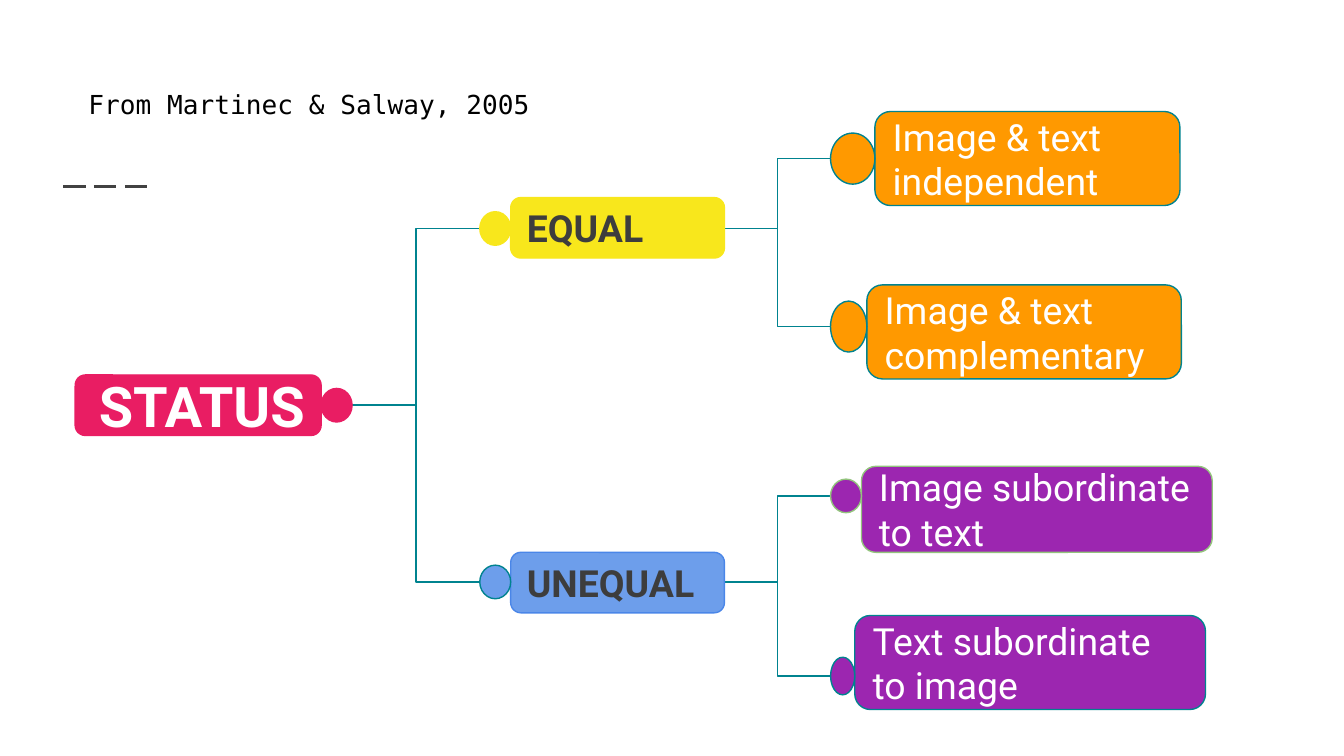
from pptx import Presentation
from pptx.dml.color import RGBColor
from pptx.enum.dml import MSO_LINE as Dash
from pptx.enum.shapes import MSO_CONNECTOR as Conn, MSO_SHAPE as Form
from pptx.enum.text import MSO_ANCHOR as Anchor, PP_ALIGN as Align
from pptx.oxml.ns import qn
from pptx.util import Inches, Pt
from lxml.etree import SubElement

TEAL, GREEN, WHITE, DARK = "00838F", "93C47D", "FFFFFF", "3D3D3D"
PINK, YELLOW, BLUE = "E91D63", "F8E71C", "6D9EEB"
ORANGE, PURPLE = "FF9900", "9C26B0"

ROOT = (0.56, 2.79, 1.83, 0.45)
ROOT_KNOB = (2.39, 2.89, 0.23, 0.25)

# Branch: label, box, box line, knob size, knob middle, knob line, fill
BRANCHES = [
    ("EQUAL", (3.8, 1.47, 1.59, 0.45), YELLOW, (0.23, 0.25), 1.7, YELLOW, YELLOW),
    ("UNEQUAL", (3.8, 4.11, 1.59, 0.45), "4A86E8", (0.23, 0.25), 4.33, TEAL, BLUE),
]
# The leaves of each branch, in the same form
LEAVES = [
    [("Image & text independent", (6.51, 0.83, 2.27, 0.7), TEAL,
      (0.33, 0.38), 1.18, TEAL, ORANGE),
     ("Image & text complementary", (6.45, 2.12, 2.34, 0.7), TEAL,
      (0.27, 0.38), 2.43, TEAL, ORANGE)],
    [("Image subordinate to text", (6.41, 3.47, 2.61, 0.64), GREEN,
      (0.23, 0.25), 3.69, GREEN, PURPLE),
     ("Text subordinate to image", (6.36, 4.58, 2.61, 0.7), TEAL,
      (0.18, 0.28), 5.03, TEAL, PURPLE)],
]


def rgb(code):
    return RGBColor.from_string(code)


def write(shape, text, size, color, font="Roboto", bold=False,
          align=Align.LEFT, anchor=Anchor.MIDDLE):
    frame = shape.text_frame
    frame.word_wrap = True
    frame.vertical_anchor = anchor
    frame.margin_left = frame.margin_right = Inches(0.1)
    frame.margin_top = frame.margin_bottom = Inches(0.1)
    para = frame.paragraphs[0]
    para.alignment = align
    run = para.add_run()
    run.text = text
    run.font.name, run.font.size, run.font.bold = font, Pt(size), bold
    run.font.color.rgb = rgb(color)


def draw_line(slide, kind, start, end, color, width):
    line = slide.shapes.add_connector(kind, *map(Inches, start + end))
    line.line.color.rgb = rgb(color)
    line.line.width = Pt(width)
    SubElement(line._element.spPr, qn("a:effectLst"))
    return line


def add_form(group, form, box, fill, edge):
    shape = group.shapes.add_shape(form, *map(Inches, box))
    shape.shadow.inherit = False
    shape.fill.solid()
    shape.fill.fore_color.rgb = rgb(fill)
    shape.line.color.rgb = rgb(edge)
    shape.line.width = Pt(0.75)
    return shape


def add_node(slide, box, knob, fill, edge, rim, text, size, color, **style):
    """A rounded label with its round knob, as one group."""
    group = slide.shapes.add_group_shape()
    label = add_form(group, Form.ROUNDED_RECTANGLE, box, fill, edge)
    write(label, text, size, color, **style)
    add_form(group, Form.OVAL, knob, fill, rim)


def add_child(slide, node, color, bold):
    """A node whose knob sits against the left side of its box."""
    text, box, edge, (wide, high), mid, rim, fill = node
    knob = (box[0] - wide, mid - high / 2, wide, high)
    add_node(slide, box, knob, fill, edge, rim, text, 20, color, bold=bold)


def link(slide, start, node):
    box, size, mid = node[1], node[3], node[4]
    draw_line(slide, Conn.ELBOW, start, (box[0] - size[0], mid), TEAL, 0.75)


def add_tree(slide):
    # Links lie behind the nodes
    left, top, wide, high = ROOT_KNOB
    for branch, leaves in zip(BRANCHES, LEAVES):
        link(slide, (left + wide, top + high / 2), branch)
        box = branch[1]
        for leaf in leaves:
            link(slide, (box[0] + box[2], branch[4]), leaf)

    # Nodes
    add_node(slide, ROOT, ROOT_KNOB, PINK, PINK, PINK, "STATUS", 30, WHITE,
             bold=True, align=Align.RIGHT)
    for branch, leaves in zip(BRANCHES, LEAVES):
        add_child(slide, branch, DARK, True)
        for leaf in leaves:
            add_child(slide, leaf, WHITE, False)


def add_header(slide, left, top, wide, high):
    # Source of the scheme
    note = slide.shapes.add_textbox(*map(Inches, (left, top, wide, high)))
    write(note, "From Martinec & Salway, 2005", 14, "000000",
          font="DejaVu Sans Mono", anchor=Anchor.TOP)
    # Dashed rule below it
    x, y = left - 0.09, top + 0.83
    rule = draw_line(slide, Conn.STRAIGHT, (x, y), (x + 0.67, y), "424242", 1.5)
    rule.line.dash_style = Dash.LONG_DASH


def main():
    deck = Presentation()
    # Widescreen, 16 to 9
    deck.slide_width = Inches(10)
    deck.slide_height = Inches(10 * 9 / 16)
    slide = deck.slides.add_slide(deck.slide_layouts[6])
    add_header(slide, 0.56, 0.56, 3.54, 0.69)
    add_tree(slide)
    deck.save("out.pptx")


if __name__ == "__main__":
    main()
